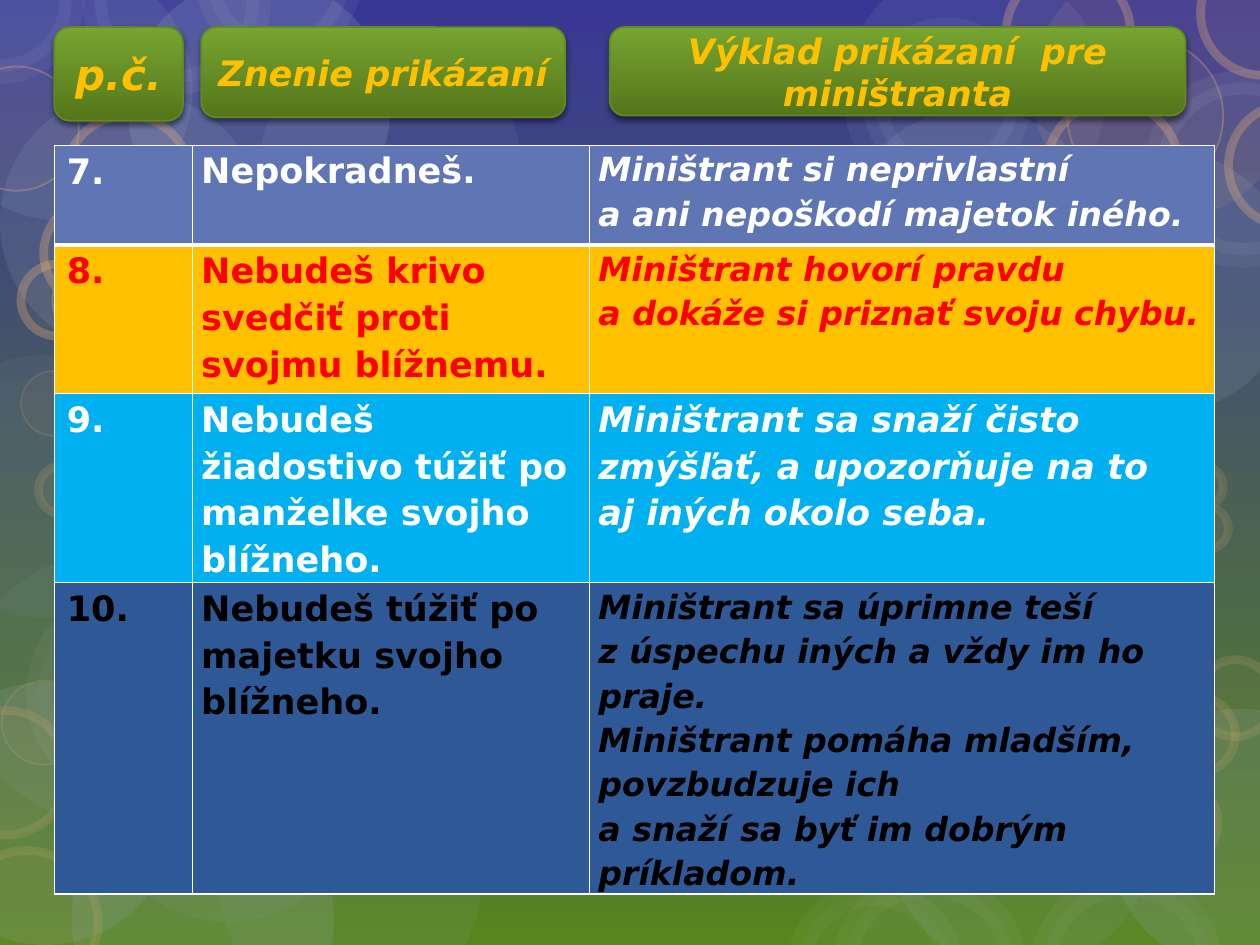
from lxml.etree import SubElement, fromstring
from pptx import Presentation
from pptx.dml.color import RGBColor
from pptx.enum.shapes import MSO_SHAPE
from pptx.enum.text import MSO_ANCHOR, PP_ALIGN
from pptx.oxml.ns import nsdecls, qn
from pptx.util import Pt

FONT = "DejaVu Sans"
SKY, MEADOW = RGBColor(0x39, 0x37, 0x95), RGBColor(0x58, 0x85, 0x1E)
MIST, PEARL = RGBColor(0x9B, 0xAD, 0xC4), RGBColor(0xEF, 0xF2, 0xF5)
PEACH = RGBColor(0xF0, 0xB5, 0x7A)
LEAF, MOSS = RGBColor(0x76, 0xA4, 0x31), RGBColor(0x55, 0x76, 0x1B)
EDGE, GOLD = RGBColor(0x63, 0x89, 0x1F), RGBColor(0xFF, 0xC0, 0x00)
WHITE, BLACK = RGBColor(0xFF, 0xFF, 0xFF), RGBColor(0, 0, 0)
RED, CYAN = RGBColor(0xFF, 0, 0), RGBColor(0, 0xB0, 0xF0)
SLATE, NAVY = RGBColor(0x60, 0x76, 0xB4), RGBColor(0x2F, 0x58, 0x97)


def set_gradient(fill, top, bottom):
    fill.gradient()
    fill.gradient_angle = 270
    for stop, color, position in zip(fill.gradient_stops, (top, bottom), (0, 1)):
        stop.color.rgb = color
        stop.position = position


def set_color(fill, color, percent):
    fill.solid()
    fill.fore_color.rgb = color
    clr = fill._xPr.find(".//" + qn("a:srgbClr"))
    SubElement(clr, qn("a:alpha"), val=str(percent * 1000))


prs = Presentation()
prs.slide_width, prs.slide_height = Pt(720), Pt(540)
s = prs.slides.add_slide(prs.slide_layouts[6])
set_gradient(s.background.fill, SKY, MEADOW)

# fill, fill %, line, line width, line %, circles as (left, top, diameter)
BUBBLES = [
    (MIST, 8, None, 0, 0, [(-19, 318, 150), (125, 429, 150), (-50, 203, 150), (55, 377, 150)]),
    (MIST, 10, None, 0, 0, [(41, 86, 150), (148, 22, 150), (482, -21, 150), (508, 405, 150),
                            (486, 189, 96)]),
    (MIST, 16, None, 0, 0, [(41, 451, 150), (634, 405, 150), (-49, 390, 150)]),
    (MIST, 14, None, 0, 0, [(-40, -24, 150)]),
    (MIST, 20, None, 0, 0, [(73, -13, 150)]),
    (MIST, 15, None, 0, 0, [(0, 52, 150), (590, 86, 150), (482, 62, 150)]),
    (MIST, 5, None, 0, 0, [(525, 343, 150)]),
    (PEACH, 10, None, 0, 0, [(590, -24, 150)]),
    (MIST, 10, PEARL, 14, 6, [(661, 47, 99), (500, 17, 82), (541, 114, 96), (568, 161, 82),
                              (610, 210, 57), (54, -47, 94), (118, -54, 82), (-41, -41, 82)]),
    (MIST, 6, PEARL, 14, 4, [(22, 341, 110), (456, 511, 88), (482, 505, 98), (596, 505, 96)]),
    (PEACH, 5, PEACH, 1, 15, [(1, 389, 48), (600, 442, 58), (590, 388, 58), (12, 212, 37),
                              (37, 249, 36)]),
    (PEACH, 5, PEACH, 5, 15, [(-26, 486, 82), (-32, 406, 71), (549, 413, 58), (648, 446, 48),
                              (636, 323, 44), (662, 398, 44), (684, 377, 44), (675, 266, 24),
                              (661, 279, 24), (678, 290, 24), (22, 266, 28)]),
    (PEACH, 5, PEACH, 1, 30, [(-26, 38, 71), (30, 148, 48), (610, 22, 89), (588, 104, 48)]),
    (PEACH, 5, PEACH, 5, 30, [(37, 66, 72), (25, 114, 61), (12, 151, 41), (575, -17, 71),
                              (686, -28, 71), (702, 59, 71), (598, 58, 76)]),
]
for color, percent, line, width, line_percent, circles in BUBBLES:
    for x, y, d in circles:
        sp = s.shapes.add_shape(MSO_SHAPE.OVAL, Pt(x), Pt(y), Pt(d), Pt(d))
        sp.shadow.inherit = False
        set_color(sp.fill, color, percent)
        if line is None:
            sp.line.fill.background()
        else:
            sp.line.width = Pt(width)
            set_color(sp.line.fill, line, line_percent)

COLS = [79, 227, 357]
ROWS = [57, 85, 108, 178]
COMMANDMENTS = [
    (SLATE, WHITE, 19, "7.", "Nepokradneš.",
     "Miništrant si neprivlastní\va ani nepoškodí majetok iného."),
    (GOLD, RED, 19, "8.", "Nebudeš krivo svedčiť proti svojmu blížnemu.",
     "Miništrant hovorí pravdu\va dokáže si priznať svoju chybu."),
    (CYAN, WHITE, 20, "9.", "Nebudeš žiadostivo túžiť po manželke svojho blížneho.",
     "Miništrant sa snaží čisto zmýšľať, a upozorňuje na to\vaj iných okolo seba."),
    (NAVY, BLACK, 19, "10.", "Nebudeš túžiť po majetku svojho blížneho.",
     "Miništrant sa úprimne teší\vz úspechu iných a vždy im ho praje.\n"
     "Miništrant pomáha mladším, povzbudzuje ich\n"
     "a snaží sa byť im dobrým príkladom."),
]
table = s.shapes.add_table(len(ROWS), len(COLS), Pt(31), Pt(83),
                           Pt(sum(COLS)), Pt(sum(ROWS))).table
table.first_row = table.horz_banding = False
for column, width in zip(table.columns, COLS):
    column.width = Pt(width)
for row, height in zip(table.rows, ROWS):
    row.height = Pt(height)
for i, (fill, color, note_size, *texts) in enumerate(COMMANDMENTS):
    for j, text in enumerate(texts):
        cell = table.cell(i, j)
        cell.fill.solid()
        cell.fill.fore_color.rgb = fill
        widths = {"L": 1, "R": 1, "T": 3 if i == 1 else 1, "B": 3 if i == 0 else 1}
        for k, (side, width) in enumerate(widths.items()):
            cell._tc.get_or_add_tcPr().insert(k, fromstring(
                f'<a:ln{side} {nsdecls("a")} w="{Pt(width)}"><a:solidFill>'
                f'<a:srgbClr val="{WHITE}"/></a:solidFill></a:ln{side}>'))
        if j > 0:
            margins = {"margin_left": 5, "margin_right": 5, "margin_top": 0, "margin_bottom": 0}
            for name, value in margins.items():
                setattr(cell, name, Pt(value))
        cell.text_frame.text = text
        font = {"name": FONT, "size": Pt(note_size if j == 2 else 20),
                "bold": True, "italic": j == 2}
        for p in cell.text_frame.paragraphs:
            if j > 0:
                p.line_spacing = 1.15
            if (i, j) == (0, 1):
                p.alignment = PP_ALIGN.JUSTIFY
            for r in p.runs:
                r.font.color.rgb = color
                for name, value in font.items():
                    setattr(r.font, name, value)

HEADERS = [
    (31, 73.5, 53.5, 24, "p.č."),
    (115, 208, 51.5, 20, "Znenie prikázaní"),
    (348.5, 329, 50.5, 20, "Výklad prikázaní  pre miništranta"),
]
for x, w, h, size, text in HEADERS:
    sp = s.shapes.add_shape(MSO_SHAPE.ROUNDED_RECTANGLE, Pt(x), Pt(15.5), Pt(w), Pt(h))
    set_gradient(sp.fill, LEAF, MOSS)
    sp.line.color.rgb = EDGE
    sp.line.width = Pt(1)
    sp.shadow.inherit = False
    shadow = SubElement(sp._element.spPr.find(qn("a:effectLst")), qn("a:outerShdw"),
                        blurRad=str(Pt(3)), dist=str(Pt(2)), dir="5400000", rotWithShape="0")
    clr = SubElement(shadow, qn("a:srgbClr"), val=str(BLACK))
    SubElement(clr, qn("a:alpha"), val="45000")
    tf = sp.text_frame
    tf.word_wrap = True
    tf.vertical_anchor = MSO_ANCHOR.MIDDLE
    p = tf.paragraphs[0]
    p.alignment = PP_ALIGN.CENTER
    r = p.add_run()
    r.text = text
    r.font.color.rgb = GOLD
    font = {"name": FONT, "size": Pt(size), "bold": True, "italic": True}
    for name, value in font.items():
        setattr(r.font, name, value)

prs.save("out.pptx")
